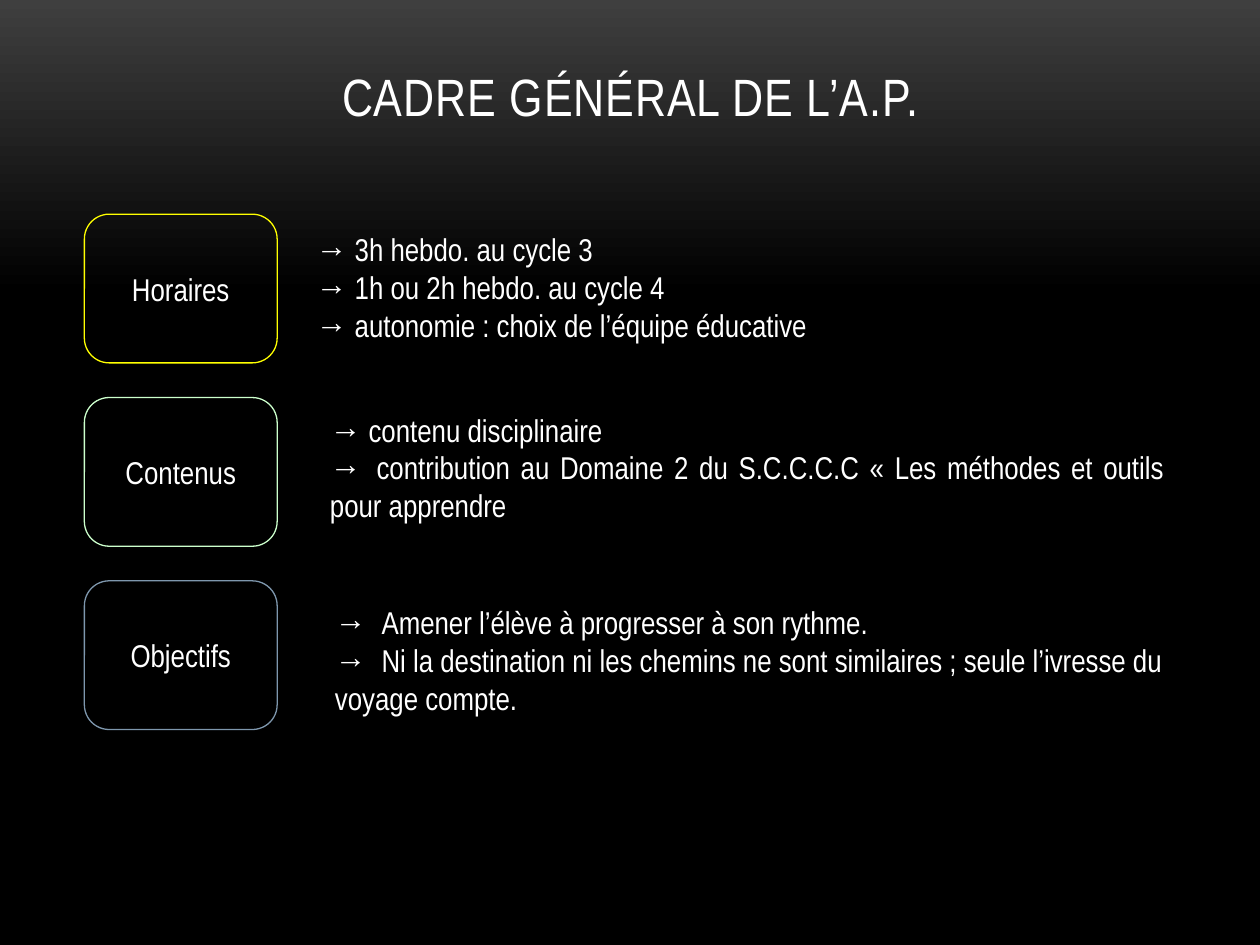
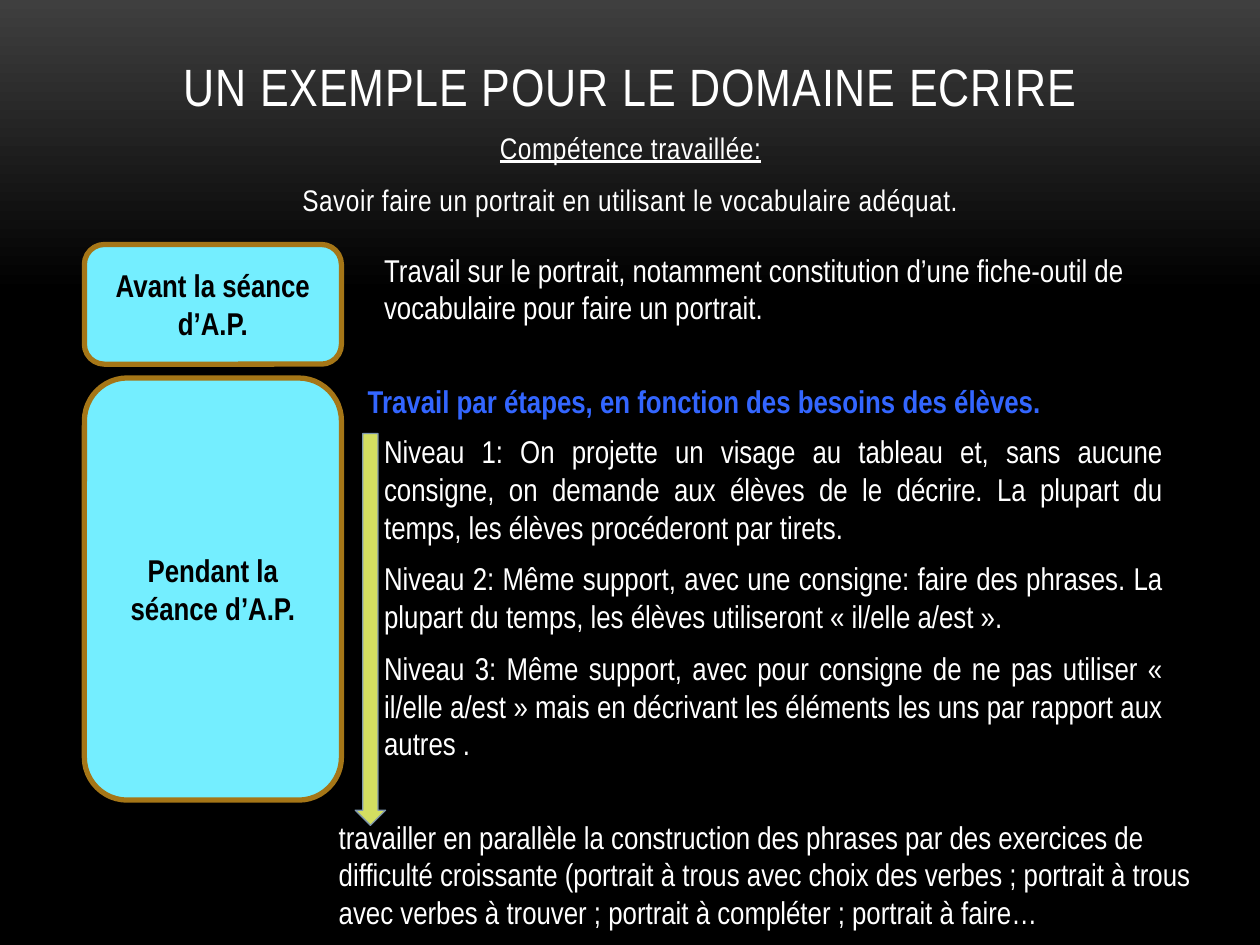
from copy import deepcopy
from dataclasses import dataclass

from pptx import Presentation
from pptx.dml.color import RGBColor
from pptx.enum.shapes import MSO_SHAPE
from pptx.enum.text import MSO_ANCHOR, MSO_AUTO_SIZE, PP_ALIGN
from pptx.oxml.ns import qn
from pptx.util import Inches, Pt

ROUNDED, DOWN_ARROW = MSO_SHAPE.ROUNDED_RECTANGLE, MSO_SHAPE.DOWN_ARROW
LEFT, CENTER, JUSTIFY = PP_ALIGN.LEFT, PP_ALIGN.CENTER, PP_ALIGN.JUSTIFY
TOP, MIDDLE, BOTTOM = MSO_ANCHOR.TOP, MSO_ANCHOR.MIDDLE, MSO_ANCHOR.BOTTOM
NO_AUTOFIT = MSO_AUTO_SIZE.NONE
TITLE_ONLY = 5


@dataclass(frozen=True)
class Theme:
    font: str = "Arial Narrow"
    title_size: int = 30
    skill_size: int = 17
    text_size: int = 18
    white: str = "FFFFFF"
    black: str = "000000"
    glow: str = "3F3F3F"
    yellow: str = "FFFF00"
    mint: str = "CCFFCC"
    slate: str = "7E97AD"
    cyan: str = "74EEFF"
    bronze: str = "A57617"
    blue: str = "3366FF"
    lime: str = "D3DE61"


THEME = Theme()
MARGIN, CONTENT_WIDTH = 0.67, 8.67
RIGHT_EDGE = MARGIN + CONTENT_WIDTH


def rgb(code):
    return RGBColor.from_string(code)


def place(box, left, top, width, height):
    box.left, box.top = Inches(left), Inches(top)
    box.width, box.height = Inches(width), Inches(height)


def paint_background(master):
    """Dark gradient that every page inherits."""
    fill = master.background.fill
    fill.gradient()
    fill.gradient_angle = 270
    stops = fill.gradient_stops
    for stop, position, color in zip(stops, (0, 0.31), (THEME.glow, THEME.black)):
        stop.position = position
        stop.color.rgb = rgb(color)
    stop_list = next(master.element.iter(qn("a:gsLst")))
    last_stop = deepcopy(stop_list[-1])
    last_stop.set("pos", "100000")
    stop_list.append(last_stop)


def set_tab(para, position):
    tabs = para._p.get_or_add_pPr().makeelement(qn("a:tabLst"), {})
    tab = tabs.makeelement(qn("a:tab"), {"pos": str(Inches(position)), "algn": "l"})
    tabs.append(tab)
    para._p.get_or_add_pPr().append(tabs)


def add_span(para, text, size=THEME.text_size, color=THEME.white,
             bold=False, underline=False, tracking=0):
    span = para.add_run()
    span.text = text
    font = span.font
    font.name, font.size, font.bold = THEME.font, Pt(size), bold
    font.underline = underline
    font.color.rgb = rgb(color)
    if tracking:
        span._r.get_or_add_rPr().set("spc", str(round(tracking * 100)))


def add_text(page, left, top, width, height, lines, align=LEFT, tab=None, **style):
    box = page.shapes.add_textbox(
        Inches(left), Inches(top), Inches(width), Inches(height))
    frame = box.text_frame
    frame.word_wrap = True
    frame.vertical_anchor = TOP
    for index, line in enumerate(lines):
        para = frame.add_paragraph() if index else frame.paragraphs[0]
        para.alignment = align
        if tab:
            set_tab(para, tab)
        add_span(para, line, **style)
    return frame


def add_preset(page, kind, left, top, width, height, line, line_width, fill=None):
    shape = page.shapes.add_shape(
        kind, Inches(left), Inches(top), Inches(width), Inches(height))
    shape.shadow.inherit = False
    if fill:
        shape.fill.solid()
        shape.fill.fore_color.rgb = rgb(fill)
    else:
        shape.fill.background()
    shape.line.color.rgb = rgb(line)
    shape.line.width = Pt(line_width)
    return shape


def add_label(page, text, left, top, width, height, line, line_width,
              fill=None, **style):
    shape = add_preset(page, ROUNDED, left, top, width, height, line, line_width, fill)
    frame = shape.text_frame
    frame.word_wrap = True
    frame.vertical_anchor = MIDDLE
    para = frame.paragraphs[0]
    para.alignment = CENTER
    add_span(para, text, **style)


def add_page(deck, title, title_top):
    page = deck.slides.add_slide(deck.slide_layouts[TITLE_ONLY])
    box = page.shapes.title
    place(box, MARGIN, title_top, CONTENT_WIDTH, 0.61)
    frame = box.text_frame
    frame.auto_size = NO_AUTOFIT
    frame.vertical_anchor = BOTTOM
    para = frame.paragraphs[0]
    para.alignment = CENTER
    add_span(para, title, THEME.title_size, tracking=0.5)
    return page


def build_framework(deck):
    page = add_page(deck, "CADRE GÉNÉRAL DE L’A.P.", 0.45)
    # label, outline, text left, text top, alignment, lines
    rows = [
        ("Horaires", THEME.yellow, 2.41, 1.78, LEFT, [
            "→ 3h hebdo. au cycle 3",
            "→ 1h ou 2h hebdo. au cycle 4",
            "→ autonomie : choix de l’équipe éducative"]),
        ("Contenus", THEME.mint, 2.52, 3.21, JUSTIFY, [
            "→ contenu disciplinaire",
            "→\tcontribution au Domaine 2 du S.C.C.C.C « Les méthodes et outils "
            "pour apprendre"]),
        ("Objectifs", THEME.slate, 2.56, 4.74, LEFT, [
            "→\tAmener l’élève à progresser à son rythme.",
            "→\tNi la destination ni les chemins ne sont similaires ; "
            "seule l’ivresse du voyage compte."]),
    ]
    for index, (label, outline, left, top, align, lines) in enumerate(rows):
        add_label(page, label, MARGIN, 1.7 + 1.455 * index, 1.53, 1.18, outline, 0.75)
        add_text(page, left, top, RIGHT_EDGE - left, 1.01, lines, align, tab=0.37)


def build_example(deck):
    page = add_page(deck, "UN EXEMPLE POUR LE DOMAINE ECRIRE", 0.37)

    # Skill being practised
    skill = add_text(page, MARGIN, 0.98, CONTENT_WIDTH, 0.96, [
        "Compétence travaillée:",
        "Savoir faire un portrait en utilisant le vocabulaire adéquat."],
        CENTER, size=THEME.skill_size, tracking=0.3)
    heading, sentence = skill.paragraphs
    heading.runs[0].font.underline = True
    heading.space_after = sentence.space_after = Pt(6)
    sentence.space_before = Pt(3.4)

    # Stages of the session
    for label, top, height in [("Avant la séance d’A.P.", 1.94, 0.95),
                               ("Pendant la séance d’A.P.", 3, 3.35)]:
        add_label(page, label, MARGIN, top, 2.04, height, THEME.bronze, 3,
                  THEME.cyan, color=THEME.black, bold=True)

    # Work before and during the session
    text_left, text_width = 2.95, 6.38
    add_text(page, text_left, 1.94, text_width, 1.01, [
        "Travail sur le portrait, notamment constitution d’une fiche-outil de "
        "vocabulaire pour faire un portrait."])
    add_text(page, 2.82, 2.98, 6.52, 0.4, [
        "Travail par étapes, en fonction des besoins des élèves."],
        color=THEME.blue, bold=True)

    # Levels, stacked one under the other
    levels = [
        (1.01, "Niveau 1: On projette un visage au tableau et, sans aucune consigne, "
               "on demande aux élèves de le décrire. La plupart du temps, les élèves "
               "procéderont par tirets."),
        (0.71, "Niveau 2: Même support, avec une consigne: faire des phrases. La "
               "plupart du temps, les élèves utiliseront « il/elle a/est »."),
        (1.01, "Niveau 3: Même support, avec pour consigne de ne pas utiliser "
               "« il/elle a/est » mais en décrivant les éléments les uns par rapport "
               "aux autres ."),
    ]
    top = 3.38
    for height, text in levels:
        add_text(page, text_left, top, text_width, height, [text], JUSTIFY)
        top += height

    # Parallel work and progress arrow
    add_text(page, 2.59, 6.44, 7.16, 1.01, [
        "travailler en parallèle la construction des phrases par des exercices de "
        "difficulté croissante (portrait à trous avec choix des verbes ; portrait à "
        "trous avec verbes à trouver ; portrait à compléter ; portrait à faire…"])
    add_preset(page, DOWN_ARROW, 2.82, 3.44, 0.24, 3.11, THEME.slate, 0.75, THEME.lime)


def main():
    deck = Presentation()
    deck.slide_width, deck.slide_height = Inches(10), Inches(7.5)
    paint_background(deck.slide_master)
    build_framework(deck)
    build_example(deck)
    deck.save("out.pptx")


if __name__ == "__main__":
    main()
